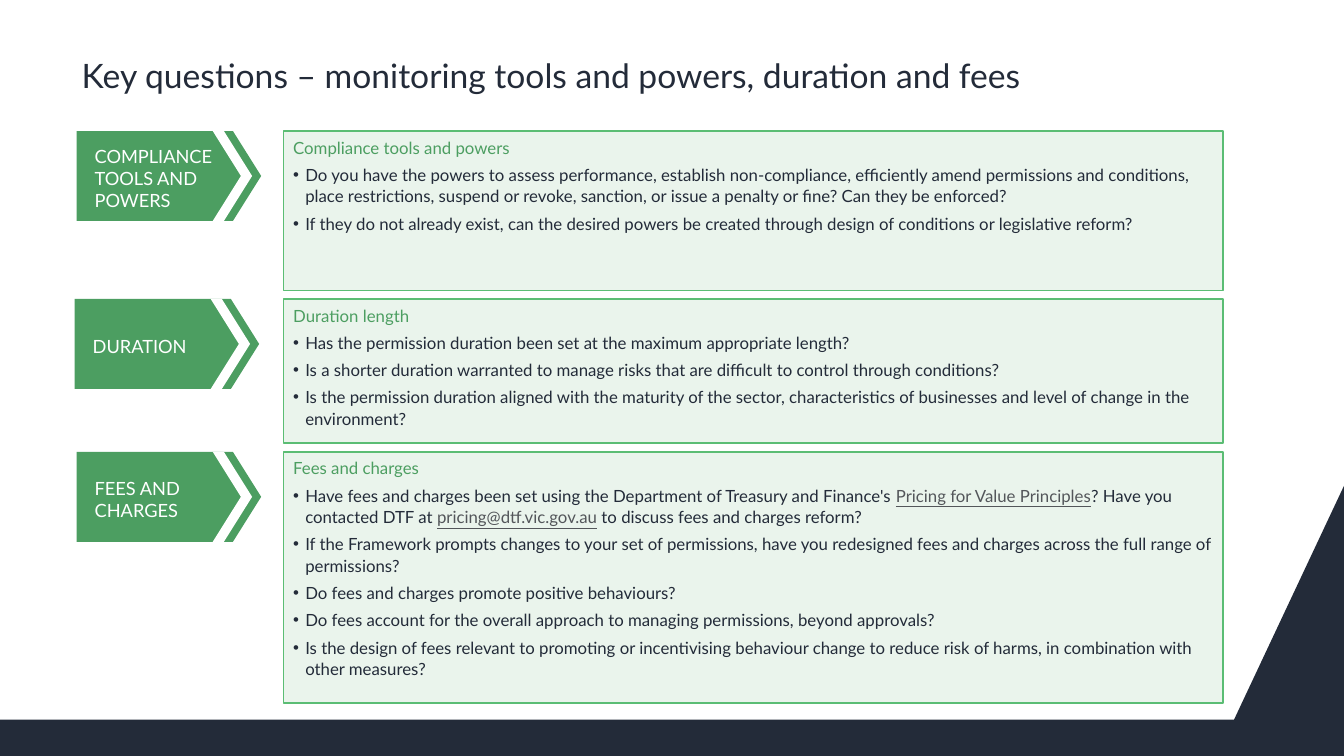
from lxml import etree
from pptx import Presentation
from pptx.dml.color import RGBColor
from pptx.enum.shapes import MSO_SHAPE
from pptx.enum.text import MSO_ANCHOR, PP_ALIGN
from pptx.oxml.ns import qn
from pptx.util import Inches, Pt

RECTANGLE = MSO_SHAPE.RECTANGLE
TOP, MIDDLE, BOTTOM = MSO_ANCHOR.TOP, MSO_ANCHOR.MIDDLE, MSO_ANCHOR.BOTTOM
LEFT = PP_ALIGN.LEFT

THEME = {
    "font": "Lato",
    "title_size": 24, "body_size": 12, "label_size": 13,
    "navy": RGBColor.from_string("232B39"),
    "green": RGBColor.from_string("4C9E61"),
    "border": RGBColor.from_string("5BBD74"),
    "tint": RGBColor.from_string("EAF4EC"),
    "link": RGBColor.from_string("53565A"),
    "white": RGBColor.from_string("FFFFFF"),
}

# Each topic: arrow label, arrow left, panel height, heading, bullets.
# A bullet is a list of (text, is_link) runs. Lengths are percent of the slide.
TOPICS = [
    ("COMPLIANCE TOOLS AND POWERS", 5.7, 21.07, "Compliance tools and powers", [
        [("Do you have the powers to assess performance, establish non-compliance, "
          "efficiently amend permissions and conditions, place restrictions, suspend or "
          "revoke, sanction, or issue a penalty or fine? Can they be enforced?", False)],
        [("If they do not already exist, can the desired powers be created through "
          "design of conditions or legislative reform?", False)],
    ]),
    ("DURATION", 5.55, 19.07, "Duration length", [
        [("Has the permission duration been set at the maximum appropriate length?", False)],
        [("Is a shorter duration warranted to manage risks that are difficult to control "
          "through conditions?", False)],
        [("Is the permission duration aligned with the maturity of the sector, "
          "characteristics of businesses and level of change in the environment?", False)],
    ]),
    ("FEES AND CHARGES", 5.7, 33.2, "Fees and charges", [
        [("Have fees and charges been set using the Department of Treasury and "
          "Finance's ", False),
         ("Pricing for Value Principles", True),
         ("? Have you contacted DTF at ", False),
         ("pricing@dtf.vic.gov.au", True),
         (" to discuss fees and charges reform?", False)],
        [("If the Framework prompts changes to your set of permissions, have you "
          "redesigned fees and charges across the full range of permissions?", False)],
        [("Do fees and charges promote positive behaviours?", False)],
        [("Do fees account for the overall approach to managing permissions, beyond "
          "approvals?", False)],
        [("Is the design of fees relevant to promoting or incentivising behaviour change "
          "to reduce risk of harms, in combination with other measures?", False)],
    ]),
]

prs = Presentation()
prs.slide_width, prs.slide_height = Inches(13.33), Inches(7.5)
COLUMN, ROW = prs.slide_width / 100, prs.slide_height / 100
slide = prs.slides.add_slide(prs.slide_layouts[6])


def add_outline(points, color):
    """Draw a closed, filled outline through points given in grid units."""
    corners = [(round(x * COLUMN), round(y * ROW)) for x, y in points]
    builder = slide.shapes.build_freeform(*corners[0], scale=1.0)
    builder.add_line_segments(corners[1:], close=True)
    outline = builder.convert_to_shape()
    outline.shadow.inherit = False
    outline.fill.solid()
    outline.fill.fore_color.rgb = color
    outline.line.fill.background()


def add_run(paragraph, text, size, color):
    run = paragraph.add_run()
    run.text = text
    run.font.name, run.font.size = THEME["font"], Pt(size)
    run.font.color.rgb = color
    return run


# Navy footer rising at the right edge
add_outline([(0, 95.2), (91.82, 95.2), (100, 64.27), (100, 100), (0, 100)], THEME["navy"])

# Title
title = slide.shapes.add_textbox(
    round(5.78 * COLUMN), round(5.87 * ROW), round(86.27 * COLUMN), round(7.47 * ROW))
title_frame = title.text_frame
title_frame.word_wrap = True
title_frame.vertical_anchor = BOTTOM
title_frame.margin_left = title_frame.margin_right = Inches(0.04)
title_frame.paragraphs[0].line_spacing = 0.9
add_run(title_frame.paragraphs[0],
        "Key questions – monitoring tools and powers, duration and fees",
        THEME["title_size"], THEME["navy"])

# Topic rows
PANEL_LEFT, PANEL_WIDTH, PANEL_GAP = 21.08, 69.92, 1.15
ARROW_HEIGHT, ARROW_BODY, ARROW_HEAD = 11.9, 11.63, 2.1
STRIPE_OFFSET, STRIPE_WIDTH = 10.13, 0.83
top = 17.33

for label_text, left, height, heading, bullets in TOPICS:
    # Question panel
    panel = slide.shapes.add_shape(
        RECTANGLE, round(PANEL_LEFT * COLUMN), round(top * ROW),
        round(PANEL_WIDTH * COLUMN), round(height * ROW))
    panel.shadow.inherit = False
    panel.fill.solid()
    panel.fill.fore_color.rgb = THEME["tint"]
    panel.line.color.rgb = THEME["border"]
    panel.line.width = Pt(1)
    questions = panel.text_frame
    questions.word_wrap = True
    questions.vertical_anchor = TOP
    add_run(questions.paragraphs[0], heading, THEME["body_size"], THEME["green"])
    for bullet in bullets:
        question = questions.add_paragraph()
        properties = question._p.get_or_add_pPr()
        properties.set("marL", str(Inches(0.12)))
        properties.set("indent", str(-Inches(0.12)))
        etree.SubElement(properties, qn("a:buFont"), typeface="Arial")
        etree.SubElement(properties, qn("a:buChar"), char="•")
        for text, is_link in bullet:
            run = add_run(question, text, THEME["body_size"],
                          THEME["link" if is_link else "navy"])
            if is_link:
                run.font.underline = True
    for paragraph in questions.paragraphs:
        paragraph.alignment = LEFT
        paragraph.line_spacing = 1.07
        paragraph.space_before = paragraph.space_after = Pt(2)

    # Arrow with a white chevron stripe
    middle, bottom = top + ARROW_HEIGHT / 2, top + ARROW_HEIGHT
    shoulder = left + ARROW_BODY
    add_outline([(left, top), (shoulder, top), (shoulder + ARROW_HEAD, middle),
                 (shoulder, bottom), (left, bottom)], THEME["green"])
    near = left + STRIPE_OFFSET
    far = near + STRIPE_WIDTH
    add_outline([(near, top), (far, top), (far + ARROW_HEAD, middle), (far, bottom),
                 (near, bottom), (near + ARROW_HEAD, middle)], THEME["white"])

    # Arrow label
    label = slide.shapes.add_shape(
        RECTANGLE, round((left + 1.05) * COLUMN), round((top + 3.73) * ROW),
        round(9.83 * COLUMN), round(5.07 * ROW))
    label.shadow.inherit = False
    label.fill.solid()
    label.fill.fore_color.rgb = THEME["green"]
    label.line.fill.background()
    label_frame = label.text_frame
    label_frame.word_wrap = True
    label_frame.vertical_anchor = MIDDLE
    label_frame.margin_left = label_frame.margin_right = Inches(0.04)
    label_frame.margin_top = label_frame.margin_bottom = Inches(0.04)
    label_frame.paragraphs[0].alignment = LEFT
    add_run(label_frame.paragraphs[0], label_text, THEME["label_size"], THEME["white"])

    top += height + PANEL_GAP

prs.save("out.pptx")
